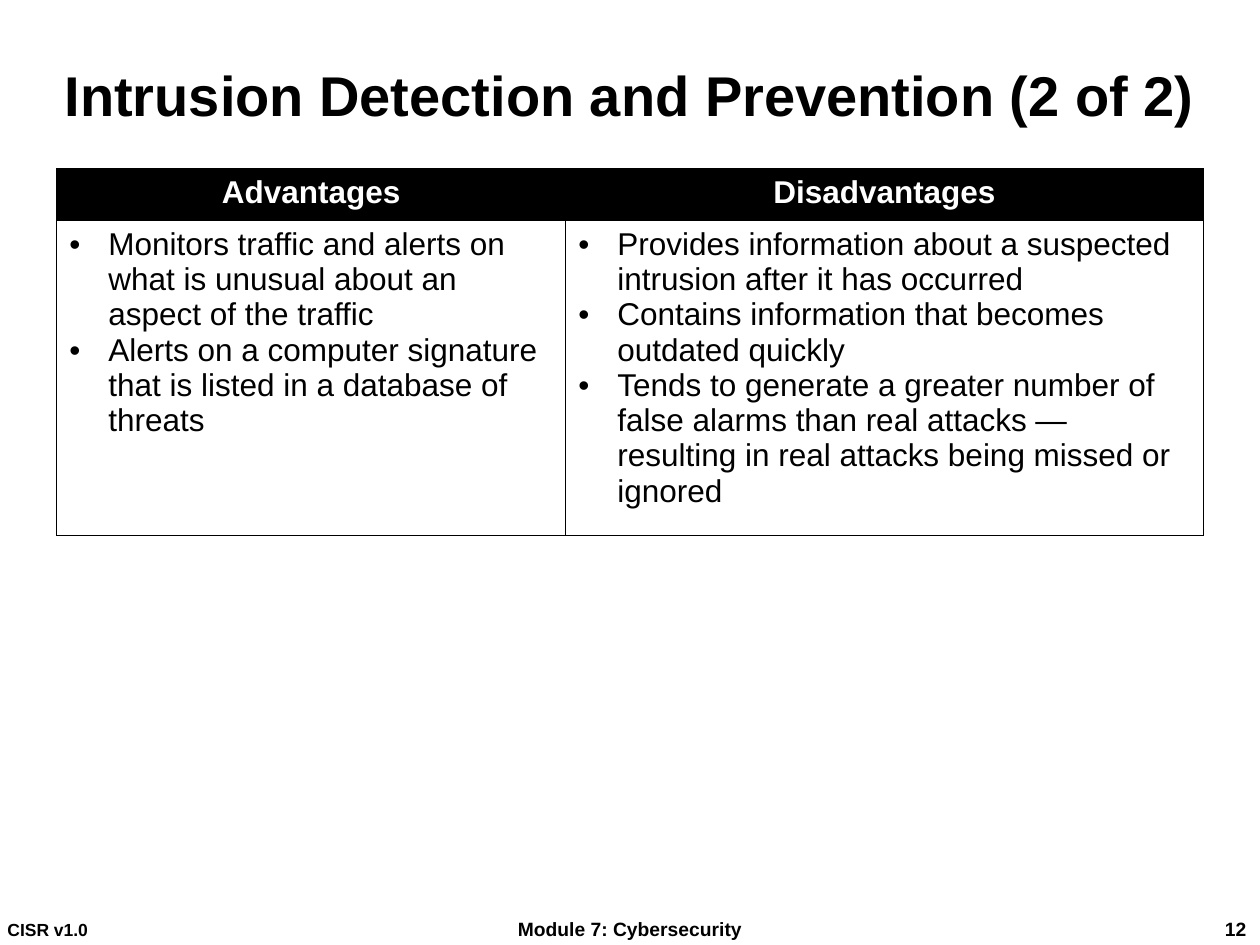
from lxml import etree
from pptx import Presentation
from pptx import util as u
from pptx.dml.color import RGBColor
from pptx.enum import text
from pptx.oxml import ns

COLORS = {"ink": "000000", "paper": "FFFFFF"}
FONT = "Arial"
COLUMNS = [
    ("Advantages", 4.04, [
        "Monitors traffic and alerts on what is unusual about an aspect of the traffic",
        "Alerts on a computer signature that is listed in a database of threats",
    ]),
    ("Disadvantages", 5.06, [
        "Provides information about a suspected intrusion after it has occurred",
        "Contains information that becomes outdated quickly",
        "Tends to generate a greater number of false alarms than real attacks — "
        "resulting in real attacks being missed or ignored",
    ]),
]
ROW_HEIGHTS = (0.41, 2.34)
THIN, THICK = 0.75, 1


def style_font(para, size, color="ink", bold=True):
    """Set the font of a whole paragraph."""
    font = para.font
    font.name, font.size, font.bold = FONT, u.Pt(size), bold
    font.color.rgb = RGBColor.from_string(COLORS[color])


def add_label(page, box, words, size, align, side_insets):
    """Place one line of bold text, centred vertically in its box."""
    frame = page.shapes.add_textbox(*map(u.Inches, box)).text_frame
    frame.word_wrap = True
    frame.vertical_anchor = text.MSO_ANCHOR.MIDDLE
    frame.margin_left, frame.margin_right = map(u.Inches, side_insets)
    frame.margin_top = frame.margin_bottom = u.Inches(0.01)
    para = frame.paragraphs[0]
    para.text, para.alignment = words, align
    style_font(para, size)


def add_footer(page, top, height):
    """Place the version, module name and page number along the bottom."""
    align = text.PP_ALIGN
    add_label(page, (0.05, top, 3.1, height), "CISR v1.0", 10, align.LEFT, (0.01, 0.05))
    add_label(page, (3.25, top, 3.5, height), "Module 7: Cybersecurity", 11,
              align.CENTER, (0.1, 0.1))
    add_label(page, (9.55, top, 0.44, height), "12", 11, align.RIGHT, (0.1, 0.1))


def set_borders(cell, widths):
    """Draw solid cell edges in the order left, right, top, bottom."""
    properties = cell._tc.get_or_add_tcPr()
    for index, (side, width) in enumerate(zip("LRTB", widths)):
        line = etree.Element(ns.qn(f"a:ln{side}"), w=str(u.Pt(width)))
        fill = etree.SubElement(line, ns.qn("a:solidFill"))
        etree.SubElement(fill, ns.qn("a:srgbClr"), val=COLORS["ink"])
        properties.insert(index, line)


def add_bullet(para, indent):
    """Give a paragraph a round bullet with a hanging indent."""
    properties = para._p.get_or_add_pPr()
    properties.set("marL", str(u.Inches(indent)))
    properties.set("indent", str(-u.Inches(indent)))
    etree.SubElement(properties, ns.qn("a:buFont"), typeface=FONT)
    etree.SubElement(properties, ns.qn("a:buChar"), char="•")


def fill_cell(cell, lines, is_header):
    """Write a header or a bulleted list into a cell."""
    cell.fill.solid()
    cell.fill.fore_color.rgb = RGBColor.from_string(COLORS["ink" if is_header else "paper"])
    frame = cell.text_frame
    for index, line in enumerate(lines):
        para = frame.add_paragraph() if index else frame.paragraphs[0]
        para.text = line
        if is_header:
            para.alignment = text.PP_ALIGN.CENTER
        else:
            add_bullet(para, 0.31)
        style_font(para, 18, "paper" if is_header else "ink", is_header)


def add_comparison(page, left, top):
    """Place the table of advantages and disadvantages."""
    width = sum(column[1] for column in COLUMNS)
    box = map(u.Inches, (left, top, width, sum(ROW_HEIGHTS)))
    table = page.shapes.add_table(len(ROW_HEIGHTS), len(COLUMNS), *box).table
    for row, height in zip(table.rows, ROW_HEIGHTS):
        row.height = u.Inches(height)
    for index, (heading, column_width, points) in enumerate(COLUMNS):
        table.columns[index].width = u.Inches(column_width)
        sides = (THICK, THIN) if index else (THIN, THICK)
        header, body = table.cell(0, index), table.cell(1, index)
        fill_cell(header, [heading], True)
        fill_cell(body, points, False)
        set_borders(header, (*sides, THIN, THICK))
        set_borders(body, (*sides, THICK, THIN))


def main():
    """Build the slide and save the deck."""
    deck = Presentation()
    deck.slide_width, deck.slide_height = u.Inches(10), u.Inches(7.5)
    page = deck.slides.add_slide(deck.slide_layouts[6])
    add_label(page, (0.45, 0.25, 9.1, 1), "Intrusion Detection and Prevention (2 of 2)",
              32, text.PP_ALIGN.CENTER, (0.01, 0.01))
    add_footer(page, 7.25, 0.25)
    add_comparison(page, 0.45, 1.34)
    deck.save("out.pptx")


if __name__ == "__main__":
    main()
